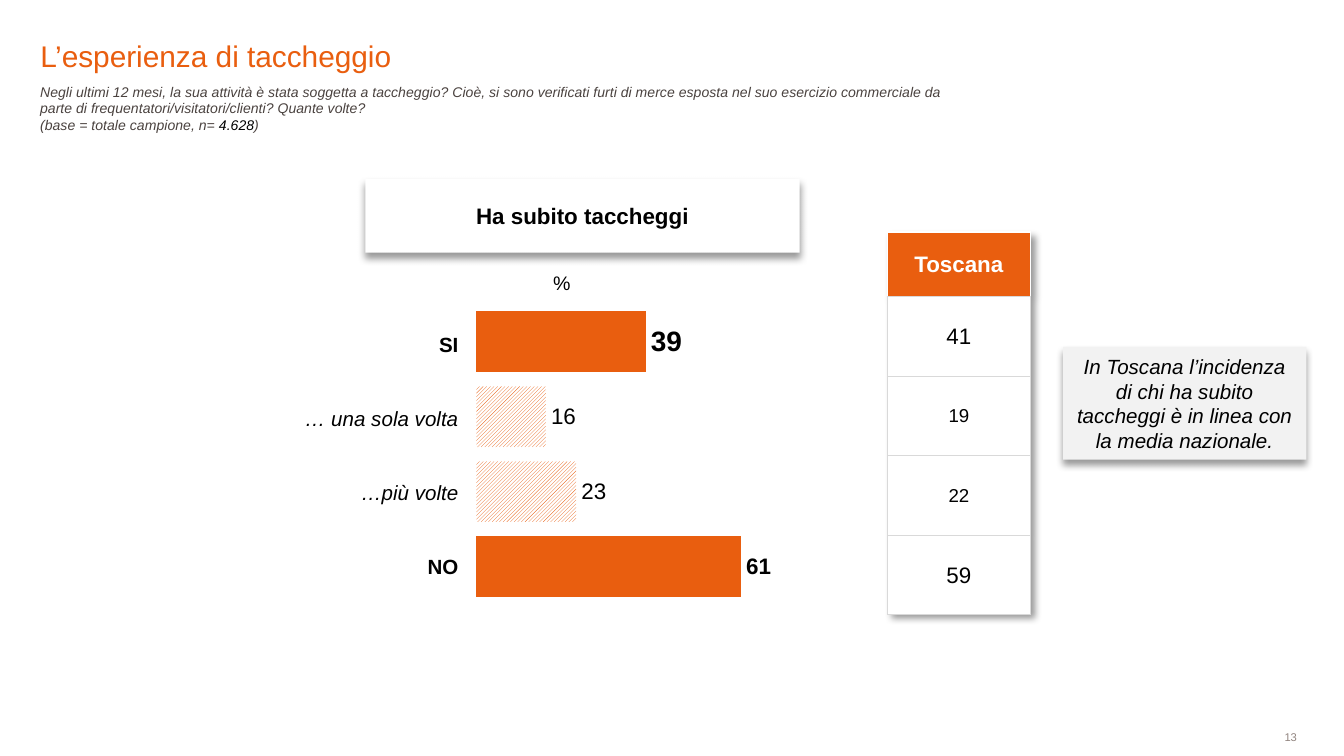
import pptx
import pptx.util
import pptx.dml.color
import pptx.chart.data
import pptx.enum.chart
import pptx.enum.dml
import pptx.enum.shapes
import pptx.enum.text
import pptx.oxml
import pptx.oxml.ns

Pt = pptx.util.Pt
RGB = pptx.dml.color.RGBColor.from_string
ALIGN = pptx.enum.text.PP_ALIGN
ANCHOR = pptx.enum.text.MSO_ANCHOR
NS = pptx.oxml.ns.nsdecls("a")
C = {"orange": "E95E0F", "black": "000000", "white": "FFFFFF", "brown": "4A423F",
     "grey": "928580", "pale": "F2F2F2", "line": "D9D9D9"}


def write(p, text, size, color="black", align=ALIGN.LEFT, bold=False, italic=False):
    p.alignment = align
    f = p.font
    f.name, f.size, f.bold, f.italic = "Arial", Pt(size), bold, italic
    f.color.rgb = RGB(C[color])
    r = p.add_run()
    r.text = text


def shadow(angle):
    return pptx.oxml.parse_xml(
        f'<a:effectLst {NS}><a:outerShdw blurRad="{Pt(4)}" dist="{Pt(3)}" '
        f'dir="{angle * 60000}" algn="tl" rotWithShape="0"><a:srgbClr val="{C["black"]}">'
        '<a:alpha val="40000"/></a:srgbClr></a:outerShdw></a:effectLst>')


prs = pptx.Presentation()
prs.slide_width, prs.slide_height = Pt(720), Pt(405)
s = prs.slides.add_slide(prs.slide_layouts[6])

labels = [
    ("13", (598.3, 391.7, 96.5, 6.5), 6, "grey", ALIGN.RIGHT, ANCHOR.MIDDLE, 0),
    ("L’esperienza di taccheggio", (21.6, 1.4, 450.7, 38.2), 16, "orange",
     ALIGN.LEFT, ANCHOR.BOTTOM, 0),
    ("%", (254.2, 136.8, 93.6, 29.5), 10.5, "black", ALIGN.CENTER, ANCHOR.MIDDLE, 7.2),
]
for text, box, size, color, align, anchor, inset in labels:
    tf = s.shapes.add_textbox(*map(Pt, box)).text_frame
    tf.word_wrap = True
    tf.vertical_anchor = anchor
    tf.margin_left = tf.margin_right = Pt(inset)
    tf.margin_top = tf.margin_bottom = Pt(inset / 2)
    write(tf.paragraphs[0], text, size, color, align)

tf = s.shapes.add_textbox(Pt(14.4), Pt(41), Pt(514), Pt(44)).text_frame
tf.word_wrap = True
write(tf.paragraphs[0], "Negli ultimi 12 mesi, la sua attività è stata soggetta a taccheggio? "
      "Cioè, si sono verificati furti di merce esposta nel suo esercizio commerciale da parte di "
      "frequentatori/visitatori/clienti? Quante volte?", 7.5, "brown", italic=True)
p = tf.add_paragraph()
write(p, "(base = totale campione, n=", 7.5, "brown", italic=True)
r = p.add_run()
r.text = " 4.628"
r.font.color.rgb = RGB(C["black"])
r = p.add_run()
r.text = ")"

panels = [
    ("Ha subito taccheggi", (195.8, 95.8, 232.6, 39.6), "white", 12, True, False),
    ("In Toscana l’incidenza di chi ha subito taccheggi è in linea con la media nazionale.",
     (569.5, 185.8, 130.3, 60.5), "pale", 11, False, True),
]
for text, box, fill, size, bold, italic in panels:
    sp = s.shapes.add_shape(pptx.enum.shapes.MSO_SHAPE.RECTANGLE, *map(Pt, box))
    sp.fill.solid()
    sp.fill.fore_color.rgb = RGB(C[fill])
    sp.line.fill.background()
    sp._element.spPr.append(shadow(90))
    tf = sp.text_frame
    tf.word_wrap = True
    tf.vertical_anchor = ANCHOR.MIDDLE
    write(tf.paragraphs[0], text, size, "black", ALIGN.CENTER, bold, italic)

data = pptx.chart.data.CategoryChartData(number_format="0")
data.categories = ["1", "2", "3", "4"]
data.add_series("Series 1", [61, 23, 16, 39])
chart = s.shapes.add_chart(pptx.enum.chart.XL_CHART_TYPE.BAR_CLUSTERED,
                           Pt(157.7), Pt(160.6), Pt(468.7), Pt(177.8), data).chart
chart.has_title = chart.has_legend = False
chart.font.name, chart.font.size = "Arial", Pt(18)
chart.font.color.rgb = RGB(C["black"])
chart.category_axis.visible = False
axis = chart.value_axis
axis.visible = axis.has_major_gridlines = False
axis.minimum_scale, axis.maximum_scale, axis.major_unit = 0, 100, 10
plot = chart.plots[0]
plot.gap_width = 24
plot.vary_by_categories = False
series = plot.series[0]
series.format.fill.solid()
series.format.fill.fore_color.rgb = RGB(C["orange"])
for i, (size, bold, hatched) in enumerate([(12, True, False), (12, False, True),
                                           (12, False, True), (15, True, False)]):
    point = series.points[i]
    if hatched:
        fill = point.format.fill
        fill.patterned()
        fill.pattern = pptx.enum.dml.MSO_PATTERN.DARK_UPWARD_DIAGONAL
        fill.fore_color.rgb = RGB(C["orange"])
        fill.back_color.rgb = RGB(C["white"])
    label = point.data_label
    label.position = pptx.enum.chart.XL_LABEL_POSITION.OUTSIDE_END
    f = label.font
    f.name, f.size, f.bold = "Arial", Pt(size), bold
    f.color.rgb = RGB(C["black"])
area = chart._chartSpace.chart.plotArea
for old in area.findall(pptx.oxml.ns.qn("c:layout")):
    area.remove(old)
area.insert(0, pptx.oxml.parse_xml(
    f'<c:layout {pptx.oxml.ns.nsdecls("c")}><c:manualLayout><c:layoutTarget val="inner"/>'
    '<c:xMode val="edge"/><c:yMode val="edge"/><c:x val="0.208"/><c:y val="0.013"/>'
    '<c:w val="0.496"/><c:h val="0.905"/></c:manualLayout></c:layout>'))

tables = [
    ((139, 164.9, 107.3), [39.6] * 4, ALIGN.RIGHT, "white", 1, None,
     [("SI", 11, True, False), ("… una sola volta", 11, False, True),
      ("…più volte", 11, False, True), ("NO", 11, True, False)]),
    ((475.4, 124.4, 76.6), [34.4] + [42.6] * 4, ALIGN.CENTER, "line", 0.25, "white",
     [("Toscana", 12, True, False), ("41", 12, False, False), ("19", 10, False, False),
      ("22", 10, False, False), ("59", 12, False, False)]),
]
for (x, y, w), heights, align, line, width, fill, rows in tables:
    tbl = s.shapes.add_table(len(rows), 1, Pt(x), Pt(y), Pt(w), Pt(sum(heights))).table
    tbl.first_row = tbl.horz_banding = False
    if fill:
        tbl._tbl.tblPr.insert(0, shadow(45))
    for i, (text, size, bold, italic) in enumerate(rows):
        tbl.rows[i].height = Pt(heights[i])
        cell = tbl.cell(i, 0)
        header = text == "Toscana"
        cell.vertical_anchor = ANCHOR.MIDDLE
        cell.margin_left = cell.margin_right = cell.margin_top = Pt(0.72)
        cell.margin_bottom = Pt(0)
        for side in "LRTB":
            white = header and side != "B"
            cell._tc.get_or_add_tcPr().append(pptx.oxml.parse_xml(
                f'<a:ln{side} {NS} w="{Pt(1 if white else width)}"><a:solidFill>'
                f'<a:srgbClr val="{C["white" if white else line]}"/></a:solidFill></a:ln{side}>'))
        if fill:
            cell.fill.solid()
            cell.fill.fore_color.rgb = RGB(C["orange" if header else fill])
        else:
            cell.fill.background()
        write(cell.text_frame.paragraphs[0], text, size, "white" if header else "black",
              align, bold, italic)

prs.save("out.pptx")
